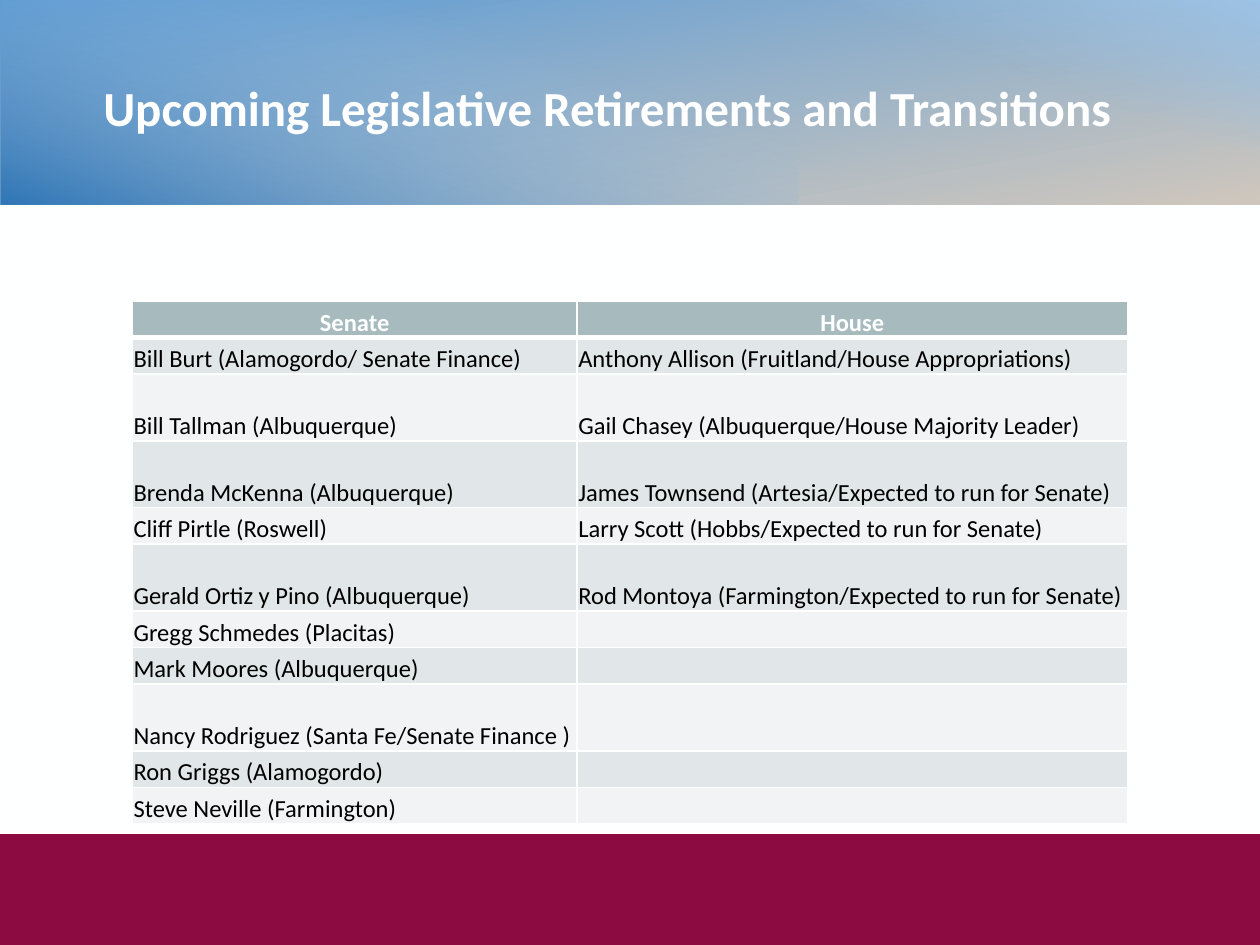
from lxml.etree import SubElement
from pptx import Presentation
from pptx.dml.color import RGBColor
from pptx.enum.shapes import MSO_SHAPE
from pptx.enum.text import MSO_ANCHOR, MSO_AUTO_SIZE, PP_ALIGN
from pptx.oxml.ns import qn
from pptx.util import Pt

TITLE = "Upcoming Legislative Retirements and Transitions"
HEADINGS = ("Senate", "House")
SHORT, TALL = 20.88, 38.16
MEMBERS = [  # senator, representative, row height
    ("Bill Burt (Alamogordo/ Senate Finance)", "Anthony Allison (Fruitland/House Appropriations)", SHORT),
    ("Bill Tallman (Albuquerque)", "Gail Chasey (Albuquerque/House Majority Leader)", TALL),
    ("Brenda McKenna (Albuquerque)", "James Townsend (Artesia/Expected to run for Senate)", TALL),
    ("Cliff Pirtle (Roswell)", "Larry Scott (Hobbs/Expected to run for Senate)", SHORT),
    ("Gerald Ortiz y Pino (Albuquerque)", "Rod Montoya (Farmington/Expected to run for Senate)", TALL),
    ("Gregg Schmedes (Placitas)", "", SHORT),
    ("Mark Moores (Albuquerque)", "", SHORT),
    ("Nancy Rodriguez (Santa Fe/Senate Finance )", "", TALL),
    ("Ron Griggs (Alamogordo)", "", SHORT),
    ("Steve Neville (Farmington)", "", SHORT),
]
COLUMN_WIDTHS = (254.16, 314.64)
TABLE_LEFT, TABLE_TOP = 75.6, 172.08

WHITE, BLACK, MAROON = "FEFFFF", "000000", "8C0B41"
HEADING_FILL, BAND_FILLS = "A7BABE", ("E1E7E8", "F1F3F4")
# box, rotation, clockwise gradient angle, stops as (percent, colour, opacity percent)
SKY_LAYERS = [
    ((300.24, -303.12, 119.52, 720.72), 270, 170, [(0, "5B9BD5", 100), (100, "CFC7BD", 100)]),
    ((511.92, -92.16, 118.8, 298.8), 270, 20, [(59, "9DC3E6", 0), (100, "9DC3E6", 100)]),
    ((168.48, -170.64, 119.52, 455.76), 90, 20, [(29, "9DC3E6", 0), (100, "2E75B6", 100)]),
]


def rgb(value):
    return RGBColor.from_string(value)


def apply(target, values):
    for name, value in values.items():
        setattr(target, name, value)


def style_font(font, size, color, bold):
    apply(font, {"name": "Calibri", "size": Pt(size), "bold": bold})
    font.color.rgb = rgb(color)


def add_band(slide, box):
    band = slide.shapes.add_shape(MSO_SHAPE.RECTANGLE, *map(Pt, box))
    band.shadow.inherit = False
    band.line.fill.background()
    return band


def add_sky(slide, box, rotation, angle, stops):
    sky = add_band(slide, box)
    sky.rotation = rotation
    sky.fill.gradient()
    sky.fill.gradient_angle = 360 - angle
    for stop, (percent, color, _) in zip(sky.fill.gradient_stops, stops):
        stop.position = percent / 100
        stop.color.rgb = rgb(color)
    colors = sky._element.spPr.iter(qn("a:srgbClr"))
    for color_node, (_, _, opacity) in zip(colors, stops):
        if opacity < 100:
            SubElement(color_node, qn("a:alpha"), val=str(opacity * 1000))


def set_borders(cell, bottom_width):
    """Draw the four edges; they must precede the cell fill in the XML."""
    properties = cell._tc.get_or_add_tcPr()
    for edge, width in (("L", 1), ("R", 1), ("T", 1), ("B", bottom_width)):
        line = SubElement(properties, qn(f"a:ln{edge}"), w=str(Pt(width)))
        SubElement(SubElement(line, qn("a:solidFill")), qn("a:srgbClr"), val=WHITE)


def fill_cell(cell, text, fill, color, heading=False):
    set_borders(cell, 3 if heading else 1)
    cell.fill.solid()
    cell.fill.fore_color.rgb = rgb(fill)
    apply(cell, {"margin_left": Pt(0.72), "margin_right": Pt(0.72), "margin_top": Pt(0.72),
                 "margin_bottom": 0, "vertical_anchor": MSO_ANCHOR.BOTTOM})
    paragraph = cell.text_frame.paragraphs[0]
    paragraph.alignment = PP_ALIGN.CENTER if heading else PP_ALIGN.LEFT
    if text:
        run = paragraph.add_run()
        run.text = text
        style_font(run.font, 14, color, heading)
    else:  # keeps an empty row from growing to the default size
        SubElement(paragraph._p, qn("a:endParaRPr"), sz="1400")


def add_member_table(slide):
    heights = [SHORT] + [height for *_, height in MEMBERS]
    table = slide.shapes.add_table(
        len(heights), len(HEADINGS), Pt(TABLE_LEFT), Pt(TABLE_TOP),
        Pt(sum(COLUMN_WIDTHS)), Pt(sum(heights))).table
    for column, width in zip(table.columns, COLUMN_WIDTHS):
        column.width = Pt(width)
    for row, height in zip(table.rows, heights):
        row.height = Pt(height)
    for column, heading in enumerate(HEADINGS):
        fill_cell(table.cell(0, column), heading, HEADING_FILL, WHITE, heading=True)
    for index, (*names, _) in enumerate(MEMBERS):
        for column, name in enumerate(names):
            fill_cell(table.cell(index + 1, column), name, BAND_FILLS[index % 2], BLACK)


def place_title(slide):
    title = slide.shapes.title
    slide.shapes._spTree.append(title._element)  # in front of the sky
    apply(title, {"left": Pt(51.84), "top": Pt(23.76), "width": Pt(618.48), "height": Pt(79.2)})
    apply(title.text_frame, {"text": TITLE, "word_wrap": True, "auto_size": MSO_AUTO_SIZE.NONE,
                             "vertical_anchor": MSO_ANCHOR.MIDDLE})
    paragraph = title.text_frame.paragraphs[0]
    apply(paragraph, {"alignment": PP_ALIGN.LEFT, "line_spacing": 0.9})
    style_font(paragraph.runs[0].font, 28, "FFFFFF", True)


def main():
    deck = Presentation()
    apply(deck, {"slide_width": Pt(720), "slide_height": Pt(540)})
    slide = deck.slides.add_slide(deck.slide_layouts[5])
    slide.background.fill.solid()
    slide.background.fill.fore_color.rgb = rgb(WHITE)

    footer = add_band(slide, (0, 476.64, 720, 63.36))
    footer.fill.solid()
    footer.fill.fore_color.rgb = rgb(MAROON)
    for layer in SKY_LAYERS:
        add_sky(slide, *layer)
    place_title(slide)
    add_member_table(slide)
    deck.save("out.pptx")


if __name__ == "__main__":
    main()
